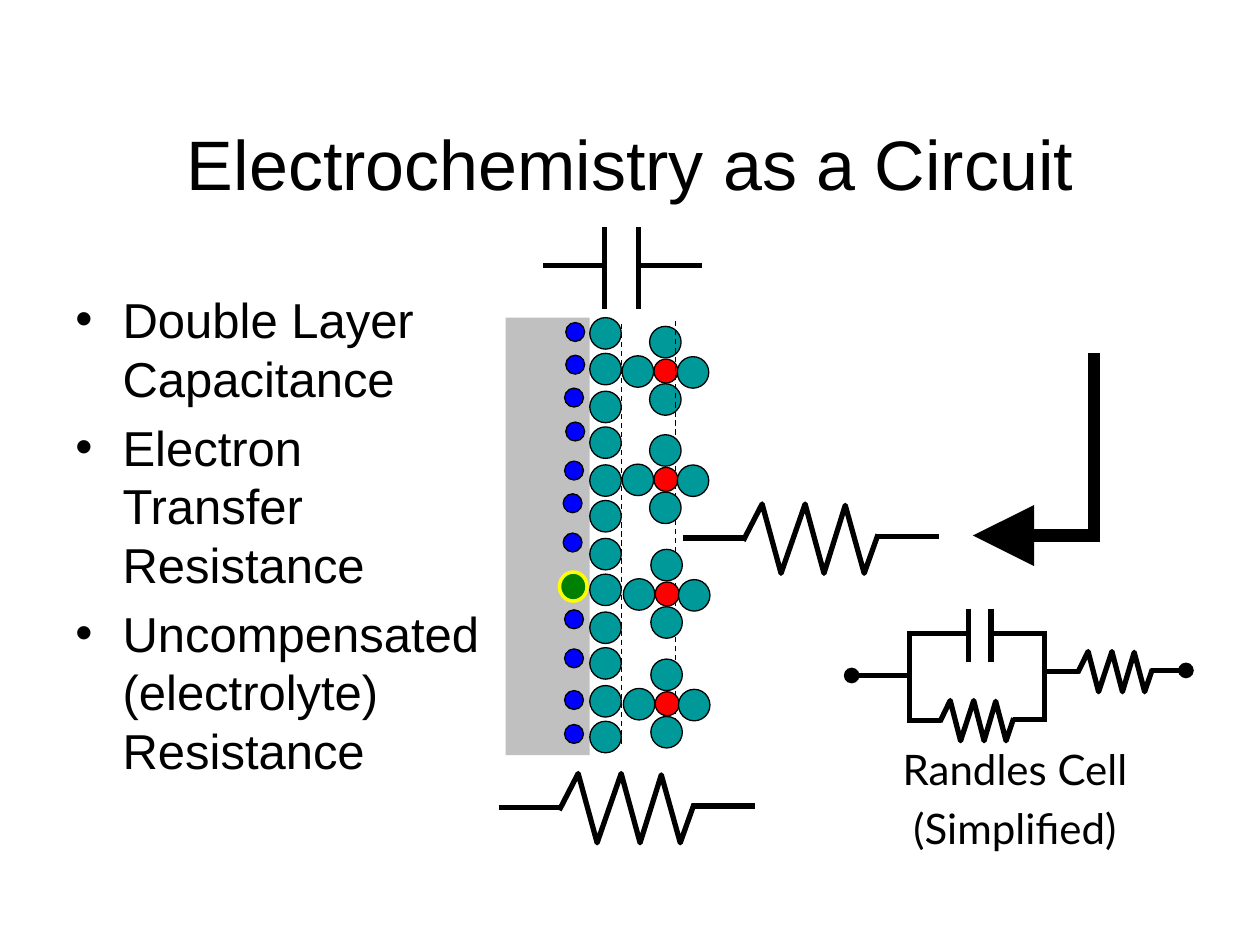
from lxml import etree
from pptx import Presentation
from pptx.dml.color import RGBColor
from pptx.enum.dml import MSO_LINE
from pptx.enum.shapes import MSO_CONNECTOR, MSO_SHAPE
from pptx.enum.text import MSO_ANCHOR, MSO_AUTO_SIZE, PP_ALIGN
from pptx.oxml.ns import qn
from pptx.util import Pt

OVAL, RECT = MSO_SHAPE.OVAL, MSO_SHAPE.RECTANGLE
STRAIGHT = MSO_CONNECTOR.STRAIGHT
DASH = MSO_LINE.DASH
CENTER, LEFT = PP_ALIGN.CENTER, PP_ALIGN.LEFT
MIDDLE, TOP = MSO_ANCHOR.MIDDLE, MSO_ANCHOR.TOP
NO_FIT, GROW = MSO_AUTO_SIZE.NONE, MSO_AUTO_SIZE.SHAPE_TO_FIT_TEXT

BLACK, METAL, WATER = "000000", "C0C0C0", "009999"
ION, ELECTRON, REACTANT, HALO = "FF0000", "0000FF", "008000", "FFFF00"
WIRE = 3

ZIGZAG = [(0.236, 0.53), (0.31, 0), (0.384, 1), (0.478, 0), (0.552, 1),
          (0.635, 0.02), (0.709, 1), (0.763, 0.44)]
WATER_SIZE, ION_SIZE, ELECTRON_SIZE = 18, 13.7, 10.8
WATER_ROWS = [42.05 * pair + step for pair in range(6) for step in (0, 20.4)]
ION_SPOTS = [(84.7, 23.7), (84.7, 85.6), (85.4, 151.1), (85.4, 213.8)]
HYDRATION = [(-2.5, -18.7), (-18.2, -1.9), (-2.5, 14.1), (13.3, -1.4)]
ELECTRON_SPOTS = [(34.3, 2.8), (34.3, 21.5), (33.6, 40.3), (34.3, 59.7),
                  (33.6, 82), (32.8, 100.7), (32.8, 123.1), (33.6, 167),
                  (33.6, 189.3), (33.6, 213.1), (33.6, 232.5)]


def color(hex_text):
    return RGBColor.from_string(hex_text)


def set_all(target, values):
    for key, value in values.items():
        setattr(target, key, value)


def place(shape, box):
    set_all(shape, dict(zip(("left", "top", "width", "height"), map(Pt, box))))


def write(shape, lines, frame_format, paragraph_format, font_format):
    frame = shape.text_frame
    set_all(frame, frame_format)
    frame.text = "\n".join(lines)
    for paragraph in frame.paragraphs:
        set_all(paragraph, paragraph_format)
        set_all(paragraph.runs[0].font, font_format)
        paragraph.runs[0].font.color.rgb = color(BLACK)
    return frame.paragraphs


def solid(slide, kind, box, fill, outline=None, weight=0.75):
    shape = slide.shapes.add_shape(kind, *map(Pt, box))
    shape.shadow.inherit = False
    shape.fill.solid()
    shape.fill.fore_color.rgb = color(fill)
    if outline:
        shape.line.color.rgb = color(outline)
        shape.line.width = Pt(weight)
    else:
        shape.line.fill.background()


def wire(slide, start, end, weight=WIRE, dash=None):
    connector = slide.shapes.add_connector(STRAIGHT, *map(Pt, (*start, *end)))
    connector.line.color.rgb = color(BLACK)
    set_all(connector.line, {"width": Pt(weight), "dash_style": dash})
    etree.SubElement(connector._element.spPr, qn("a:effectLst"))
    return connector


def cap(connector, end, kind, size="med"):
    outline = connector.line._get_or_add_ln()
    etree.SubElement(outline, qn("a:" + end), type=kind, w=size, len=size)


def resistor(slide, box):
    left, top, width, height = box

    def at(x, y):
        return left + x * width, top + y * height

    wire(slide, at(0, 0.49), at(0.246, 0.49))
    points = [tuple(map(Pt, at(*point))) for point in ZIGZAG]
    builder = slide.shapes.build_freeform(*points[0])
    builder.add_line_segments(points[1:], close=False)
    coil = builder.convert_to_shape()
    coil.shadow.inherit = False
    coil.fill.background()
    coil.line.color.rgb = color(BLACK)
    coil.line.width = Pt(WIRE)
    etree.SubElement(coil.line._get_or_add_ln(), qn("a:round"))
    return wire(slide, at(0.755, 0.47), at(1, 0.47))


def capacitor(slide, box, plates):
    left, top, width, height = box
    middle = top + 0.47 * height
    near, far = (left + plate * width for plate in plates)
    wire(slide, (left, middle), (near, middle))
    wire(slide, (far, middle), (left + width, middle))
    for plate in (near, far):
        wire(slide, (plate, top), (plate, top + height))


def hydrated_ion(slide, left, top):
    solid(slide, OVAL, (left, top, ION_SIZE, ION_SIZE), ION, BLACK)
    for dx, dy in HYDRATION:
        solid(slide, OVAL, (left + dx, top + dy, WATER_SIZE, WATER_SIZE), WATER, BLACK)


def electrode_interface(slide, box):
    left, top, width, height = box
    solid(slide, RECT, box, METAL)
    for row in WATER_ROWS:
        solid(slide, OVAL, (left + width, top + row, WATER_SIZE, WATER_SIZE), WATER, BLACK)
    ions = [(left + x, top + y) for x, y in ION_SPOTS]
    hydrated_ion(slide, *ions[0])
    for x, y in ((66, 3.5), (97, 2)):
        wire(slide, (left + x, top + y), (left + x, top + y + 240.5), 0.75, DASH)
    for ion in ions[1:]:
        hydrated_ion(slide, *ion)
    for x, y in ELECTRON_SPOTS:
        solid(slide, OVAL, (left + x, top + y, ELECTRON_SIZE, ELECTRON_SIZE), ELECTRON, BLACK)
    solid(slide, OVAL, (left + 30.7, top + 145.4, 15.8, 16.6), REACTANT, HALO, 2)


def randles_cell(slide, box):
    left, top, width, height = box
    near, far = left + 33, left + 110
    cap(wire(slide, (left, top + 38.2), (near + 1, top + 38.2)), "headEnd", "oval")
    for rail in (near, far):
        wire(slide, (rail, top + 13), (rail, top + 64))
    capacitor(slide, (near, top, 76, 30.5), (0.443, 0.613))
    resistor(slide, (near - 1.5, top + 52.5, 80, 23))
    cap(resistor(slide, (far, top + 24.5, left + width - far, 23)), "tailEnd", "oval")


def result_arrow(slide, box):
    left, top, width, height = box
    corner = left + width, top + height
    cap(wire(slide, (corner[0] + 3.5, corner[1]), (left, corner[1]), 7),
        "tailEnd", "triangle", "lg")
    wire(slide, corner, (corner[0], top), 7)


def title(slide, box):
    place(slide.shapes.title, box)
    write(slide.shapes.title, ["Electrochemistry as a Circuit"],
          {"vertical_anchor": MIDDLE, "word_wrap": True},
          {"alignment": CENTER}, {"size": Pt(40), "name": "Arial"})


def element_list(slide, box):
    lines = ["Double Layer Capacitance", "Electron Transfer Resistance",
             "Uncompensated (electrolyte) Resistance"]
    paragraphs = write(slide.shapes.add_textbox(*map(Pt, box)), lines,
                       {"vertical_anchor": TOP, "word_wrap": True, "auto_size": NO_FIT},
                       {"alignment": LEFT, "space_before": Pt(5.6), "line_spacing": Pt(33.6)},
                       {"size": Pt(28), "name": "Arial"})
    for paragraph in paragraphs:
        properties = paragraph._p.get_or_add_pPr()
        properties.set("marL", str(Pt(27)))
        properties.set("indent", str(-Pt(27)))
        etree.SubElement(properties, qn("a:buFont"), typeface="Arial")
        etree.SubElement(properties, qn("a:buChar"), char="•")


def cell_caption(slide, box):
    write(slide.shapes.add_textbox(*map(Pt, box)), ["Randles Cell", "(Simplified)"],
          {"word_wrap": False, "auto_size": GROW},
          {"alignment": CENTER, "space_before": Pt(4.8)},
          {"size": Pt(24), "name": "Lato"})


def main():
    deck = Presentation()
    set_all(deck, {"slide_width": Pt(720), "slide_height": Pt(540)})
    slide = deck.slides.add_slide(deck.slide_layouts[5])
    title(slide, (54, 48, 612, 90))
    element_list(slide, (36, 162, 252, 354))
    electrode_interface(slide, (289, 181.5, 48, 250))
    result_arrow(slide, (556, 201.5, 69, 104.5))
    capacitor(slide, (310.3, 129.8, 90.7, 46.5), (0.389, 0.603))
    for left, top in ((390.2, 288), (285.1, 442)):
        resistor(slide, (left, top, 146.2, 39.6))
    randles_cell(slide, (486.7, 347.8, 191, 76))
    cell_caption(slide, (508.3, 421.2, 143.3, 70.6))
    deck.save("out.pptx")


if __name__ == "__main__":
    main()
